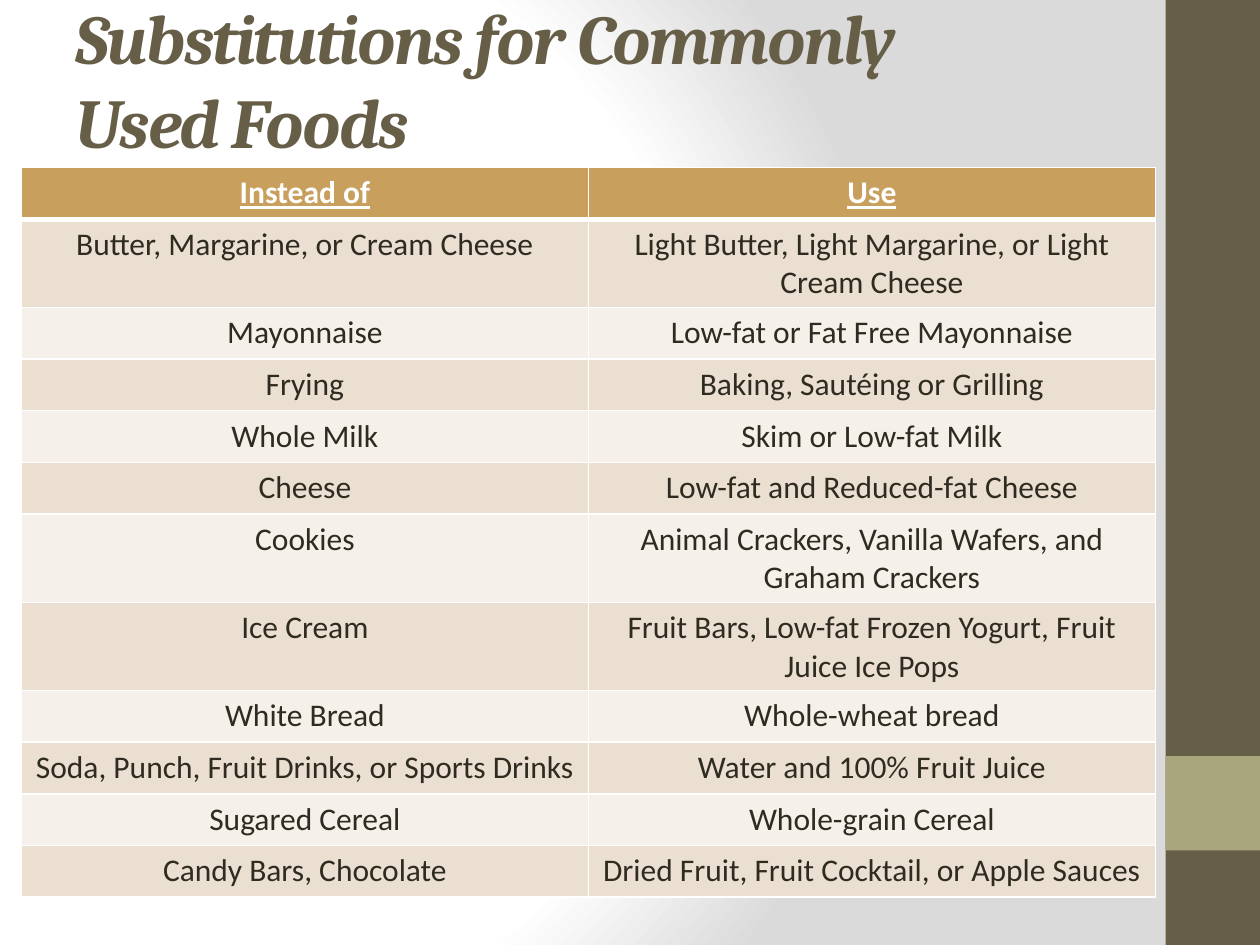
from lxml import etree
from pptx import Presentation
from pptx.dml.color import RGBColor
from pptx.enum.shapes import MSO_SHAPE
from pptx.enum.text import MSO_ANCHOR, PP_ALIGN
from pptx.oxml import parse_xml
from pptx.oxml.ns import nsdecls, qn
from pptx.util import Inches, Pt

RECTANGLE = MSO_SHAPE.RECTANGLE
MIDDLE = MSO_ANCHOR.MIDDLE
LEFT, CENTER = PP_ALIGN.LEFT, PP_ALIGN.CENTER

WHITE = RGBColor(0xFF, 0xFF, 0xFF)
GREY = RGBColor(0xDA, 0xDA, 0xDA)
BROWN = RGBColor(0x67, 0x5E, 0x47)
SAGE = RGBColor(0xA9, 0xA5, 0x7C)
GOLD = RGBColor(0xC8, 0x9F, 0x5D)
INK = RGBColor(0x2F, 0x2B, 0x20)
ROW_FILLS = (RGBColor(0xEB, 0xDF, 0xD2), RGBColor(0xF5, 0xF0, 0xEA))

TITLE = "Substitutions for Commonly\vUsed Foods"
HEADINGS = ("Instead of", "Use")
SWAPS = (
    ("Butter, Margarine, or Cream Cheese",
     "Light Butter, Light Margarine, or Light Cream Cheese"),
    ("Mayonnaise", "Low-fat or Fat Free Mayonnaise"),
    ("Frying", "Baking, Sautéing or Grilling"),
    ("Whole Milk", "Skim or Low-fat Milk"),
    ("Cheese", "Low-fat and Reduced-fat Cheese"),
    ("Cookies", "Animal Crackers, Vanilla Wafers, and Graham Crackers"),
    ("Ice Cream", "Fruit Bars, Low-fat Frozen Yogurt, Fruit Juice Ice Pops"),
    ("White Bread", "Whole-wheat bread"),
    ("Soda, Punch, Fruit Drinks, or Sports Drinks",
     "Water and 100% Fruit Juice"),
    ("Sugared Cereal", "Whole-grain Cereal"),
    ("Candy Bars, Chocolate", "Dried Fruit, Fruit Cocktail, or Apple Sauces"),
)


def write_text(frame, text, *, font, size, color, align=LEFT, bold=False,
               italic=False, underline=False, spacing=None):
    paragraph = frame.paragraphs[0]
    paragraph.text = text
    paragraph.alignment = align
    for run in paragraph.runs:
        run.font.name = font
        run.font.size = Pt(size)
        run.font.color.rgb = color
        run.font.bold = bold
        run.font.italic = italic
        run.font.underline = underline
        if spacing is not None:
            run.font._element.set("spc", str(round(spacing * 100)))


def paint_background(slide):
    # Radial gradient, white on the left fading to grey
    stops = "".join(
        f'<a:gs pos="{percent * 1000}"><a:srgbClr val="{color}"/></a:gs>'
        for percent, color in ((0, WHITE), (75, WHITE), (100, GREY)))
    gradient = parse_xml(
        f'<a:gradFill {nsdecls("a")} rotWithShape="1"><a:gsLst>{stops}</a:gsLst>'
        '<a:path path="circle"><a:fillToRect l="20000" t="50000" r="100000" '
        'b="50000"/></a:path></a:gradFill>')
    fill = slide.background.fill
    fill.solid()
    properties = slide._element.cSld.bg.bgPr
    properties.replace(properties.find(qn("a:solidFill")), gradient)


def add_block(slide, left, top, width, height, color):
    block = slide.shapes.add_shape(RECTANGLE, left, top, width, height)
    block.shadow.inherit = False
    block.fill.solid()
    block.fill.fore_color.rgb = color
    block.line.fill.background()


def add_sidebar(slide, left, top, width, height):
    add_block(slide, left, top, width, height, BROWN)
    # Square accent, one side length above the bottom
    add_block(slide, left, top + height - 2 * width, width, width, SAGE)


def add_title(slide, left, top, width, height):
    frame = slide.shapes.add_textbox(left, top, width, height).text_frame
    frame.word_wrap = True
    frame.vertical_anchor = MIDDLE
    write_text(frame, TITLE, font="Cambria", size=40, color=BROWN,
               bold=True, italic=True, spacing=-1)


def set_borders(cell, bottom):
    properties = cell._tc.get_or_add_tcPr()
    widths = (("lnL", 1), ("lnR", 1), ("lnT", 1), ("lnB", bottom))
    # Border lines come before the fill in the cell properties
    for position, (side, points) in enumerate(widths):
        line = etree.Element(qn(f"a:{side}"), w=str(Pt(points)))
        fill = etree.SubElement(line, qn("a:solidFill"))
        etree.SubElement(fill, qn("a:srgbClr"), val=str(WHITE))
        properties.insert(position, line)


def add_swap_table(slide, left, top, width, row_height):
    rows = (HEADINGS, *SWAPS)
    table = slide.shapes.add_table(len(rows), len(HEADINGS), left, top, width,
                                   row_height * len(rows)).table
    for r, row in enumerate(rows):
        is_heading = r == 0
        for c, text in enumerate(row):
            cell = table.cell(r, c)
            write_text(cell.text_frame, text, font="Calibri", size=18,
                       color=WHITE if is_heading else INK, align=CENTER,
                       bold=is_heading, underline=is_heading)
            cell.fill.solid()
            cell.fill.fore_color.rgb = GOLD if is_heading else ROW_FILLS[(r - 1) % 2]
            set_borders(cell, bottom=3 if is_heading else 1)


def main():
    deck = Presentation()
    deck.slide_width, deck.slide_height = Inches(10), Inches(7.5)
    slide = deck.slides.add_slide(deck.slide_layouts[6])
    paint_background(slide)
    add_sidebar(slide, Inches(9.25), 0, Inches(0.75), deck.slide_height)
    add_title(slide, Inches(0.5), 0, Inches(9), Inches(1.25))
    add_swap_table(slide, Inches(0.17), Inches(1.33), Inches(9), Inches(0.41))
    deck.save("out.pptx")


if __name__ == "__main__":
    main()
